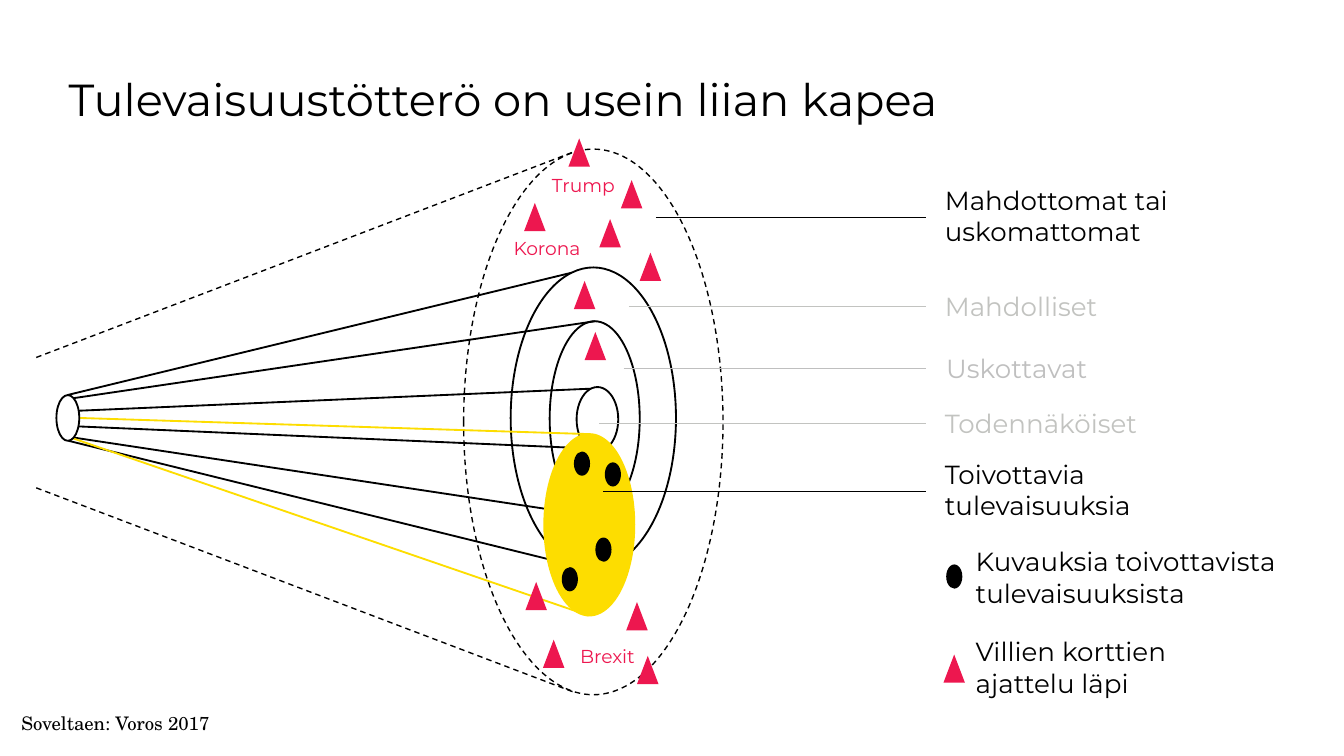
"""Builds the slide about the futures cone being too narrow."""
from lxml.etree import SubElement
from pptx import Presentation
from pptx.dml.color import RGBColor
from pptx.enum.dml import MSO_LINE
from pptx.enum.shapes import MSO_CONNECTOR, MSO_SHAPE
from pptx.enum.text import MSO_ANCHOR, PP_ALIGN
from pptx.oxml.ns import qn
from pptx.util import Inches, Pt

BLACK, WHITE, YELLOW, RED = "000000", "FFFFFF", "FDDD00", "ED174F"
GREY, MID_GREY = "C2C3C0", "BFBFBF"
SANS, SERIF = "Montserrat", "TeX Gyre Schola"

deck = Presentation()
deck.slide_width, deck.slide_height = Inches(10), Inches(10 * 9 / 16)
page = deck.slides.add_slide(deck.slide_layouts[6])


def draw_line(x1, y1, x2, y2, color, width=1, dash=None):
    line = page.shapes.add_connector(
        MSO_CONNECTOR.STRAIGHT, Inches(x1), Inches(y1), Inches(x2), Inches(y2))
    line.line.color.rgb = RGBColor.from_string(color)
    line.line.width = Pt(width)
    line.line.dash_style = dash
    SubElement(line.element.spPr, qn("a:effectLst"))


def draw_shape(kind, left, top, width, height, fill=None, outline=None, weight=1, dash=None):
    shape = page.shapes.add_shape(kind, Inches(left), Inches(top), Inches(width), Inches(height))
    shape.shadow.inherit = False
    if fill:
        shape.fill.solid()
        shape.fill.fore_color.rgb = RGBColor.from_string(fill)
    else:
        shape.fill.background()
    if outline:
        shape.line.color.rgb = RGBColor.from_string(outline)
        shape.line.width = Pt(weight)
        shape.line.dash_style = dash
    else:
        shape.line.fill.background()


cone_edges = [
    (4.45, 2.89, 0.5, 3.06), (0.5, 2.97, 4.43, 2.39), (0.5, 2.94, 4.25, 2.03),
    (4.45, 3.34, 0.51, 3.17), (0.51, 3.25, 4.35, 3.83), (0.51, 3.28, 4.32, 4.22),
]
for edge in cone_edges:
    draw_line(*edge, BLACK)

cone_mouths = [
    (4.29, 2.88, 0.31, 0.48, WHITE, BLACK),
    (4.09, 2.39, 0.67, 1.45, None, BLACK),
    (3.8, 1.99, 1.23, 2.24, None, BLACK),
    (4.05, 3.23, 0.67, 1.35, YELLOW, YELLOW),
]
for mouth in cone_mouths:
    draw_shape(MSO_SHAPE.OVAL, *mouth)

for edge in [(0.45, 3.23, 4.38, 4.58), (0.59, 3.11, 4.38, 3.23)]:
    draw_line(*edge, YELLOW)
draw_shape(MSO_SHAPE.OVAL, 0.42, 2.94, 0.17, 0.34, WHITE, BLACK)

for edge in [(0.27, 2.66, 4.27, 1.13), (0.27, 3.63, 4.27, 5.15)]:
    draw_line(*edge, BLACK, 0.75, MSO_LINE.DASH)
draw_shape(MSO_SHAPE.OVAL, 3.45, 1.11, 1.93, 4.06, None, BLACK, 0.75, MSO_LINE.DASH)

desired_futures = [(4.43, 4), (4.18, 4.22), (4.5, 3.44), (4.27, 3.36)]
legend_dot = (7.04, 4.2)
for left, top in desired_futures + [legend_dot]:
    draw_shape(MSO_SHAPE.OVAL, left, top, 0.12, 0.18, BLACK)

wild_cards = [
    (4.27, 2.09), (4.35, 2.47), (4.76, 1.88), (4.46, 1.63), (3.9, 1.51), (4.62, 1.34),
    (4.23, 1.03), (4.66, 4.48), (3.91, 4.33), (4.04, 4.76), (4.74, 4.88),
]
legend_triangle = (7.02, 4.87)
for left, top in wild_cards + [legend_triangle]:
    draw_shape(MSO_SHAPE.FLOWCHART_EXTRACT, left, top, 0.16, 0.21, RED)

leaders = [
    (4.88, 1.62, BLACK), (4.68, 2.28, GREY), (4.64, 2.74, MID_GREY),
    (4.46, 3.15, GREY), (4.49, 3.66, BLACK),
]
for start, height, color in leaders:
    draw_line(start, height, 6.89, height, color, 0.5)

texts = [
    ("Tulevaisuustötterö on usein liian kapea", 0.51, 0.29, 8.98, 0.88, 24, BLACK, SANS),
    ("Mahdottomat tai uskomattomat", 7.03, 1.37, 1.94, 0.47, 14, BLACK, SANS),
    ("Mahdolliset", 7.03, 2.16, 1.33, 0.24, 14, GREY, SANS),
    ("Uskottavat", 7.04, 2.62, 1.18, 0.24, 14, MID_GREY, SANS),
    ("Todennäköiset", 7.03, 3.03, 1.72, 0.24, 14, GREY, SANS),
    ("Toivottavia tulevaisuuksia", 7.03, 3.41, 1.72, 0.47, 14, BLACK, SANS),
    ("Kuvauksia toivottavista \vtulevaisuuksista", 7.26, 4.06, 2.65, 0.47, 14, BLACK, SANS),
    ("Villien korttien ajattelu läpi", 7.26, 4.73, 1.71, 0.47, 14, BLACK, SANS),
    ("Trump", 3.98, 1.29, 0.72, 0.17, 10, RED, SANS),
    ("Korona", 3.71, 1.76, 0.72, 0.17, 10, RED, SANS),
    ("Brexit", 4.16, 4.8, 0.72, 0.17, 10, RED, SANS),
    ("Soveltaen: Voros 2017", 0, 5.3, 2.25, 0.33, 10, BLACK, SERIF),
]
for words, left, top, width, height, size, color, face in texts:
    box = page.shapes.add_textbox(Inches(left), Inches(top), Inches(width), Inches(height))
    frame = box.text_frame
    frame.word_wrap = True
    frame.margin_top = frame.margin_right = 0
    frame.margin_left = frame.margin_bottom = Inches(0.16 if face == SERIF else 0)
    frame.vertical_anchor = MSO_ANCHOR.MIDDLE if size == 24 else MSO_ANCHOR.TOP
    para = frame.paragraphs[0]
    para.text = words
    para.alignment = PP_ALIGN.CENTER if color == RED else PP_ALIGN.LEFT
    for span in para.runs:
        span.font.name = face
        span.font.size = Pt(size)
        span.font.color.rgb = RGBColor.from_string(color)

deck.save("out.pptx")
